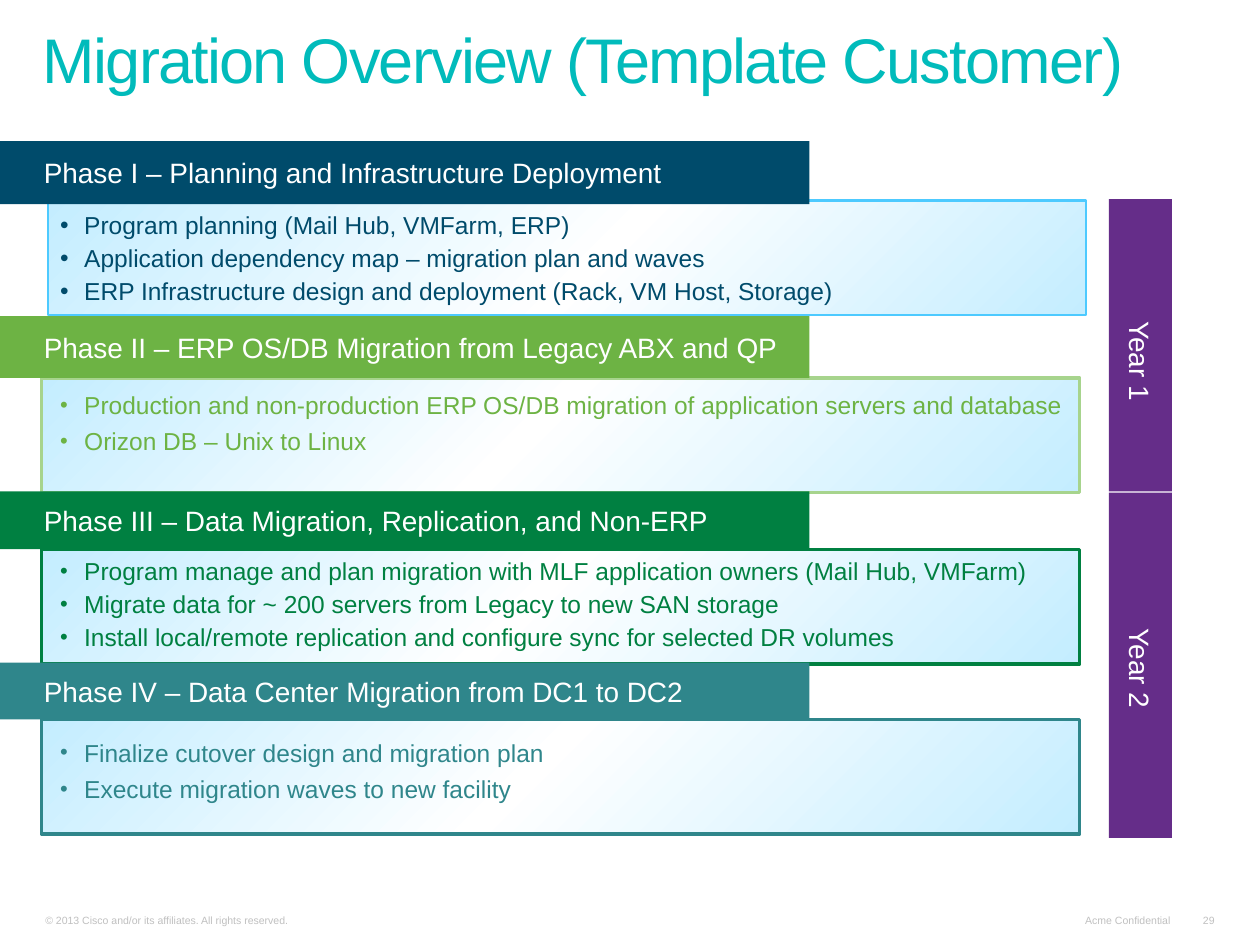
from copy import deepcopy
from dataclasses import dataclass

from lxml import etree
from pptx import Presentation
from pptx.dml.color import RGBColor
from pptx.enum.shapes import MSO_SHAPE
from pptx.enum.text import MSO_ANCHOR, MSO_AUTO_SIZE, PP_ALIGN
from pptx.oxml.ns import qn
from pptx.util import Inches, Pt

RECTANGLE = MSO_SHAPE.RECTANGLE
MIDDLE, BOTTOM = MSO_ANCHOR.MIDDLE, MSO_ANCHOR.BOTTOM
LEFT, CENTER, RIGHT = PP_ALIGN.LEFT, PP_ALIGN.CENTER, PP_ALIGN.RIGHT

WHITE = RGBColor(0xFF, 0xFF, 0xFF)
PALE_BLUE = RGBColor(0xC4, 0xED, 0xFF)
SKY = RGBColor(0x4D, 0xCA, 0xFF)
NAVY = RGBColor(0x00, 0x4B, 0x6B)
LIME = RGBColor(0x6D, 0xB3, 0x44)
PALE_LIME = RGBColor(0xA7, 0xD4, 0x8D)
GREEN = RGBColor(0x00, 0x80, 0x41)
TEAL = RGBColor(0x2F, 0x86, 0x8B)
TURQUOISE = RGBColor(0x01, 0xBB, 0xBB)
PURPLE = RGBColor(0x65, 0x2D, 0x89)
GRAY = RGBColor(0xC0, 0xC0, 0xC0)

# The slide is a grid of 40 columns by 30 rows of quarter-inch cells.
CELL = Inches(0.25)
COLUMNS, ROWS = 40, 30
PANEL_WIDTH, PANEL_HEIGHT = 32.96, 3.64
LIST_LEFT, LIST_WIDTH = 1.52, 34.24
YEAR_CENTER, YEAR_WIDTH = 36.2, 2


@dataclass(frozen=True)
class Phase:
    heading: str
    tasks: tuple[str, ...]
    color: RGBColor
    border: RGBColor
    bar_top: float
    bar_height: float
    panel_top: float
    panel_left: float = 1.32
    border_width: float = 2
    white_stop: float = 0.47
    list_lift: float = 0
    task_gap: float = 2
    bullet_percent: int = 90


@dataclass(frozen=True)
class Year:
    label: str
    top: float
    length: float
    insets: tuple[float, float] = (0.1, 0.1)


@dataclass(frozen=True)
class Footer:
    wording: str
    left: float
    width: float
    alignment: PP_ALIGN = RIGHT


PHASES = (
    Phase("Phase I – Planning and Infrastructure Deployment",
          ("Program planning (Mail Hub, VMFarm, ERP)",
           "Application dependency map – migration plan and waves",
           "ERP Infrastructure design and deployment (Rack, VM Host, Storage)"),
          NAVY, SKY, 4.48, 2, 6.36, panel_left=1.52, border_width=1.5,
          white_stop=0.53, bullet_percent=100),
    Phase("Phase II – ERP OS/DB Migration from Legacy ABX and QP",
          ("Production and non-production ERP OS/DB migration of application servers and database",
           "Orizon DB – Unix to Linux"),
          LIME, PALE_LIME, 10.04, 1.96, 12, list_lift=0.4, task_gap=4),
    Phase("Phase III – Data Migration, Replication, and Non-ERP",
          ("Program manage and plan migration with MLF application owners (Mail Hub, VMFarm)",
           "Migrate data for ~ 200 servers from Legacy to new SAN storage",
           "Install local/remote replication and configure sync for selected DR volumes"),
          GREEN, GREEN, 15.6, 1.84, 17.44, list_lift=0.1),
    Phase("Phase IV – Data Center Migration from DC1 to DC2",
          ("Finalize cutover design and migration plan",
           "Execute migration waves to new facility"),
          TEAL, TEAL, 21.04, 1.8, 22.84, list_lift=0.2, task_gap=4),
)
YEARS = (Year("Year 1", 6.32, 9.28), Year("Year 2", 15.64, 10.96, (0, 0.2)))
FOOTERS = (
    Footer("© 2013 Cisco and/or its affiliates. All rights reserved.", 1.08, 14.96, LEFT),
    Footer("Acme Confidential", 34.04, 3.48),
    Footer("29", 37.8, 1.12),
)


def cells(*counts: float) -> list[int]:
    return [round(count * CELL) for count in counts]


def format_frame(frame, **values) -> None:
    settings = {"word_wrap": True, "auto_size": MSO_AUTO_SIZE.NONE,
                "vertical_anchor": MIDDLE, **values}
    for name, value in settings.items():
        setattr(frame, name, value)


def write(paragraph, wording: str, size: float, color: RGBColor,
          alignment: PP_ALIGN = LEFT):
    paragraph.alignment = alignment
    run = paragraph.add_run()
    run.text = wording
    for name, value in {"name": "Arial", "size": Pt(size), "bold": False}.items():
        setattr(run.font, name, value)
    run.font.color.rgb = color
    return run


def indent(paragraph, margin: float, first_line: float = 0):
    properties = paragraph._p.get_or_add_pPr()
    properties.set("marL", str(Inches(margin)))
    properties.set("indent", str(Inches(first_line)))
    return properties


def add_block(slide, left: float, top: float, width: float, height: float):
    """Add a rectangle without shadow or outline."""
    block = slide.shapes.add_shape(RECTANGLE, *cells(left, top, width, height))
    block.shadow.inherit = False
    block.line.fill.background()
    return block


def add_label_block(slide, box: tuple[float, ...], color: RGBColor, wording: str,
                    alignment: PP_ALIGN = LEFT):
    block = add_block(slide, *box)
    block.fill.solid()
    block.fill.fore_color.rgb = color
    format_frame(block.text_frame)
    paragraph = block.text_frame.paragraphs[0]
    indent(paragraph, 0.25)
    write(paragraph, wording, 16, WHITE, alignment)
    return block


def add_panel(slide, phase: Phase) -> None:
    panel = add_block(slide, phase.panel_left, phase.panel_top, PANEL_WIDTH, PANEL_HEIGHT)
    panel.line.color.rgb = phase.border
    panel.line.width = Pt(phase.border_width)
    panel.fill.gradient()
    panel.fill.gradient_angle = 315
    first_stop = panel.fill._fill._gradFill.find(qn("a:gsLst"))[0]
    first_stop.addnext(deepcopy(first_stop))
    stops = ((0, PALE_BLUE), (phase.white_stop, WHITE), (1, PALE_BLUE))
    for stop, (position, color) in zip(panel.fill.gradient_stops, stops):
        stop.position = position
        stop.color.rgb = color


def add_tasks(slide, phase: Phase) -> None:
    box = slide.shapes.add_textbox(
        *cells(LIST_LEFT, phase.panel_top - phase.list_lift, LIST_WIDTH, PANEL_HEIGHT))
    frame = box.text_frame
    format_frame(frame)
    for index, task in enumerate(phase.tasks):
        paragraph = frame.add_paragraph() if index else frame.paragraphs[0]
        properties = indent(paragraph, 0.19, -0.19)
        bullet_size = etree.SubElement(properties, qn("a:buSzPct"))
        bullet_size.set("val", str(phase.bullet_percent * 1000))
        etree.SubElement(properties, qn("a:buFont")).set("typeface", "Arial")
        etree.SubElement(properties, qn("a:buChar")).set("char", "•")
        paragraph.space_before = Pt(phase.task_gap if index else 0)
        write(paragraph, task, 14, phase.color)


def add_phase(slide, phase: Phase) -> None:
    add_panel(slide, phase)
    add_tasks(slide, phase)
    add_label_block(slide, (0, phase.bar_top, 25.7, phase.bar_height),
                    phase.color, phase.heading)


def add_year(slide, year: Year) -> None:
    """Add a bar that is laid out flat and turned a quarter about its centre."""
    left = YEAR_CENTER - year.length / 2
    top = year.top + (year.length - YEAR_WIDTH) / 2
    bar = add_label_block(slide, (left, top, year.length, YEAR_WIDTH),
                          PURPLE, year.label, CENTER)
    bar.rotation = 90
    start, end = year.insets
    format_frame(bar.text_frame, margin_left=Inches(start), margin_right=Inches(end))


def add_footer(slide, footer: Footer) -> None:
    box = slide.shapes.add_textbox(*cells(footer.left, 28.8, footer.width, 0.76))
    format_frame(box.text_frame, word_wrap=footer.alignment == LEFT, vertical_anchor=BOTTOM,
                 margin_left=Inches(0.09), margin_right=Inches(0.09),
                 margin_top=Inches(0.04), margin_bottom=Inches(0.04))
    write(box.text_frame.paragraphs[0], footer.wording, 6, GRAY, footer.alignment)


def set_title(slide, wording: str) -> None:
    title = slide.shapes.title
    title.left, title.top, title.width, title.height = cells(1, 0.6, 37.76, 2.64)
    format_frame(title.text_frame, vertical_anchor=BOTTOM,
                 margin_left=Inches(0.09), margin_right=Inches(0.09))
    paragraph = title.text_frame.paragraphs[0]
    paragraph.line_spacing = 0.8
    run = write(paragraph, wording, 36, TURQUOISE)
    run.font._element.set("spc", "-100")


def main() -> None:
    presentation = Presentation()
    presentation.slide_width, presentation.slide_height = cells(COLUMNS, ROWS)
    slide = presentation.slides.add_slide(presentation.slide_layouts[5])
    set_title(slide, "Migration Overview (Template Customer)")
    for phase in PHASES:
        add_phase(slide, phase)
    for year in YEARS:
        add_year(slide, year)
    for footer in FOOTERS:
        add_footer(slide, footer)
    presentation.save("out.pptx")


if __name__ == "__main__":
    main()
